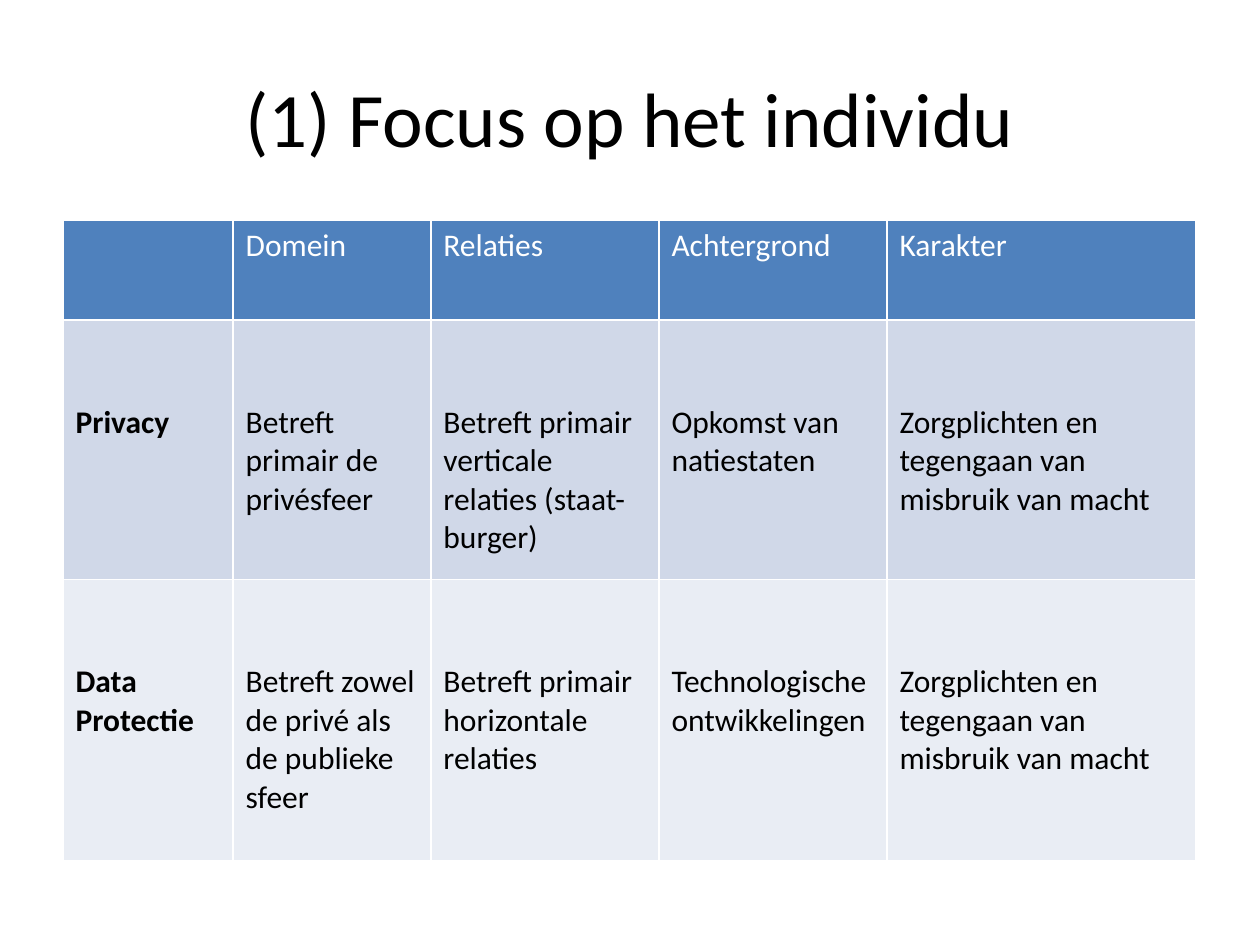
from lxml.etree import SubElement
from pptx import Presentation
from pptx.dml.color import RGBColor
from pptx.enum.text import MSO_ANCHOR, PP_ALIGN
from pptx.oxml.ns import qn
from pptx.util import Inches, Pt

TITLE = "(1) Focus op het individu"
ROWS = [
    ["", "Domein", "Relaties", "Achtergrond", "Karakter"],
    ["Privacy", "Betreft primair de privésfeer",
     "Betreft primair verticale relaties (staat-burger)",
     "Opkomst van natiestaten",
     "Zorgplichten en tegengaan van misbruik van macht"],
    ["Data Protectie", "Betreft zowel de privé als de publieke sfeer",
     "Betreft primair horizontale relaties",
     "Technologische ontwikkelingen",
     "Zorgplichten en tegengaan van misbruik van macht"],
]
COLUMN_WIDTHS = [1.35, 1.57, 1.81, 1.81, 2.45]
ROW_HEIGHTS = [0.79, 2.06, 2.23]
ROW_FILLS = ["4F81BD", "D0D8E8", "E9EDF4"]
FONT = "Calibri"
BLACK, WHITE = "000000", "FFFFFF"
HEADER_MARGIN, BODY_MARGIN = 0.05, 0.66


def color(value):
    return RGBColor.from_string(value)


def add_text(para, text, size, text_color, bold=False):
    span = para.add_run()
    span.text = text
    font = span.font
    font.name, font.size, font.bold = FONT, Pt(size), bold
    font.color.rgb = color(text_color)


def add_borders(cell, line_color, width):
    """Draw all four cell borders; they must precede the fill in the XML."""
    properties = cell._tc.get_or_add_tcPr()
    for side in ("lnL", "lnR", "lnT", "lnB"):
        line = SubElement(properties, qn(f"a:{side}"), w=str(Pt(width)))
        fill = SubElement(line, qn("a:solidFill"))
        SubElement(fill, qn("a:srgbClr"), val=line_color)


def add_title(page):
    box = page.shapes.add_textbox(Inches(0.5), Inches(0.3), Inches(9), Inches(1.25))
    frame = box.text_frame
    frame.word_wrap = True
    frame.vertical_anchor = MSO_ANCHOR.MIDDLE
    para = frame.paragraphs[0]
    para.alignment = PP_ALIGN.CENTER
    add_text(para, TITLE, 44, BLACK)


def add_comparison(page):
    table = page.shapes.add_table(
        len(ROWS), len(COLUMN_WIDTHS), Inches(0.5), Inches(1.75),
        Inches(sum(COLUMN_WIDTHS)), Inches(sum(ROW_HEIGHTS))).table
    for column, width in zip(table.columns, COLUMN_WIDTHS):
        column.width = Inches(width)
    for row_index, texts in enumerate(ROWS):
        header = row_index == 0
        table.rows[row_index].height = Inches(ROW_HEIGHTS[row_index])
        for column_index, text in enumerate(texts):
            cell = table.cell(row_index, column_index)
            add_borders(cell, WHITE, 1)
            cell.fill.solid()
            cell.fill.fore_color.rgb = color(ROW_FILLS[row_index])
            cell.margin_top = Inches(HEADER_MARGIN if header else BODY_MARGIN)
            if text:
                add_text(cell.text_frame.paragraphs[0], text, 18,
                         WHITE if header else BLACK,
                         bold=not header and column_index == 0)


def main():
    deck = Presentation()
    deck.slide_width, deck.slide_height = Inches(10), Inches(7.5)
    page = deck.slides.add_slide(deck.slide_layouts[6])
    add_title(page)
    add_comparison(page)
    deck.save("out.pptx")


if __name__ == "__main__":
    main()
